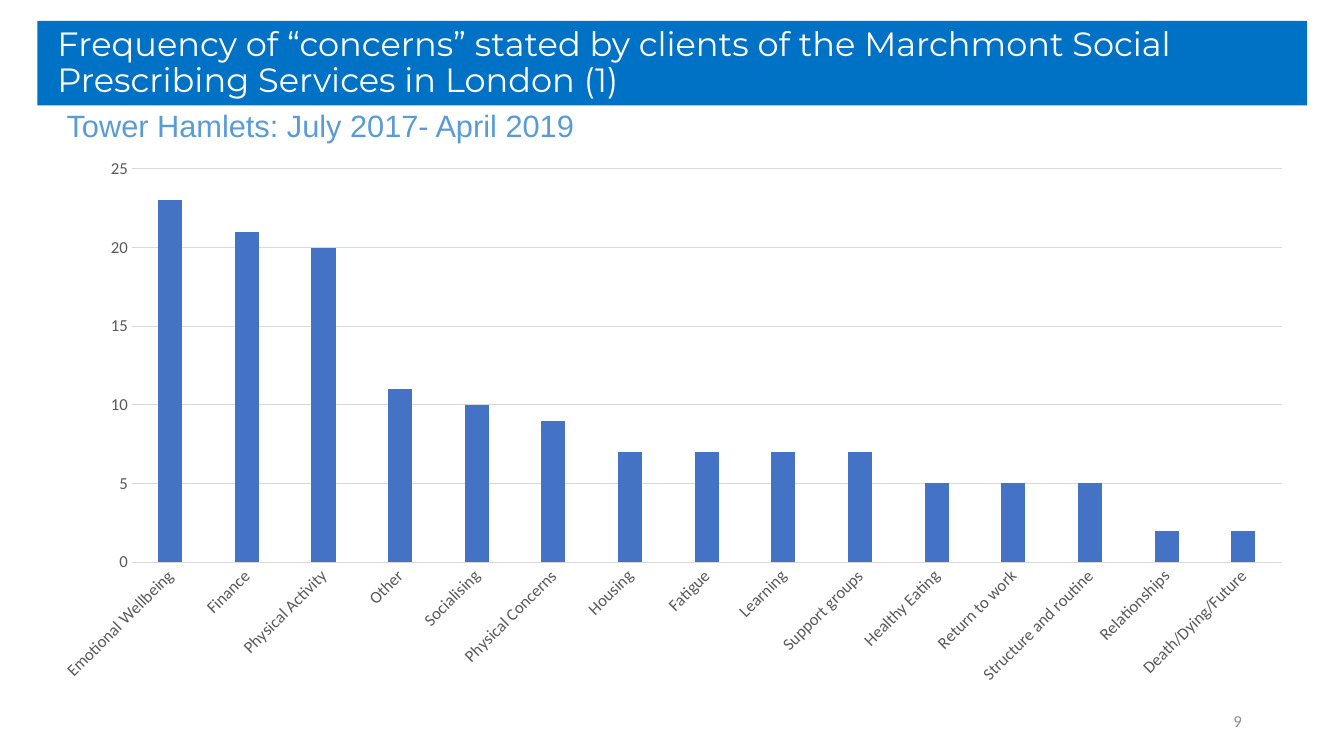
import pptx
import pptx.chart.data
import pptx.dml.color
import pptx.enum.chart
import pptx.enum.shapes
import pptx.enum.text
import pptx.util

Cm, Pt = pptx.util.Cm, pptx.util.Pt
ALIGN = pptx.enum.text.PP_ALIGN
ANCHOR = pptx.enum.text.MSO_ANCHOR

TITLE = ("Frequency of “concerns” stated by clients of the Marchmont Social "
         "Prescribing Services in London (1)")
SUBTITLE = "Tower Hamlets: July 2017- April 2019"
PAGE = "9"
CONCERNS = [
    ("Emotional Wellbeing", 23),
    ("Finance", 21),
    ("Physical Activity", 20),
    ("Other", 11),
    ("Socialising", 10),
    ("Physical Concerns", 9),
    ("Housing", 7),
    ("Fatigue", 7),
    ("Learning", 7),
    ("Support groups", 7),
    ("Healthy Eating", 5),
    ("Return to work", 5),
    ("Structure and routine", 5),
    ("Relationships", 2),
    ("Death/Dying/Future", 2),
]
COLORS = {"banner": "0072C6", "title": "FFFFFF", "subtitle": "5B9BD5",
          "page": "8C8C8C", "bar": "4472C4", "axis": "595959", "grid": "D9D9D9"}
LEFT, WIDTH = Cm(0.94), Cm(32)


def rgb(name):
    return pptx.dml.color.RGBColor.from_string(COLORS[name])


def set_text(sp, text, *, font, size, color, align=ALIGN.LEFT,
             anchor=ANCHOR.MIDDLE, inset=0.25, spacing=None):
    tf = sp.text_frame
    tf.word_wrap = True
    tf.vertical_anchor = anchor
    tf.margin_left = Cm(inset)
    p = tf.paragraphs[0]
    p.alignment = align
    p.line_spacing = spacing
    r = p.add_run()
    r.text = text
    r.font.name, r.font.size = font, Pt(size)
    r.font.color.rgb = rgb(color)


def style_line(line, color):
    line.width = Pt(0.75)
    line.color.rgb = rgb(color)


def style_axis(axis):
    axis.major_tick_mark = axis.minor_tick_mark = pptx.enum.chart.XL_TICK_MARK.NONE
    font = axis.tick_labels.font
    font.name, font.size = "Calibri", Pt(12)
    font.color.rgb = rgb("axis")


def add_concerns_chart(s):
    data = pptx.chart.data.CategoryChartData()
    data.categories = [name for name, _ in CONCERNS]
    data.add_series("Series 1", [count for _, count in CONCERNS])
    chart = s.shapes.add_chart(pptx.enum.chart.XL_CHART_TYPE.COLUMN_CLUSTERED,
                               LEFT, Cm(3.73), WIDTH, Cm(13.79), data).chart
    chart.has_legend = chart.has_title = False
    chart.font.name, chart.font.size = "Calibri", Pt(10)

    plot = chart.plots[0]
    plot.gap_width, plot.overlap = 219, -27
    plot.vary_by_categories = False
    fill = plot.series[0].format.fill
    fill.solid()
    fill.fore_color.rgb = rgb("bar")

    cat, val = chart.category_axis, chart.value_axis
    style_axis(cat)
    style_axis(val)
    style_line(cat.format.line, "grid")
    cat._element.txPr.bodyPr.set("rot", "-2700000")
    val.minimum_scale, val.maximum_scale, val.major_unit = 0, 25, 5
    val.format.line.fill.background()
    val.has_major_gridlines = True
    style_line(val.major_gridlines.format.line, "grid")


def main():
    prs = pptx.Presentation()
    prs.slide_width, prs.slide_height = Cm(33.87), Cm(19.05)
    s = prs.slides.add_slide(prs.slide_layouts[6])

    banner = s.shapes.add_shape(pptx.enum.shapes.MSO_SHAPE.RECTANGLE,
                                LEFT, Cm(0.53), WIDTH, Cm(2.13))
    banner.shadow.inherit = False
    banner.fill.solid()
    banner.fill.fore_color.rgb = rgb("banner")
    banner.line.fill.background()
    set_text(banner, TITLE, font="Montserrat", size=24, color="title",
             inset=0.51, spacing=0.9)

    page = s.shapes.add_textbox(Cm(23.93), Cm(17.65), Cm(7.62), Cm(1.02))
    set_text(page, PAGE, font="Calibri", size=12, color="page", align=ALIGN.RIGHT)

    add_concerns_chart(s)

    subtitle = s.shapes.add_textbox(LEFT, Cm(2.67), WIDTH, Cm(1.19))
    set_text(subtitle, SUBTITLE, font="Arial", size=22, color="subtitle",
             anchor=ANCHOR.TOP, inset=0.74, spacing=0.9)

    prs.save("out.pptx")


if __name__ == "__main__":
    main()
